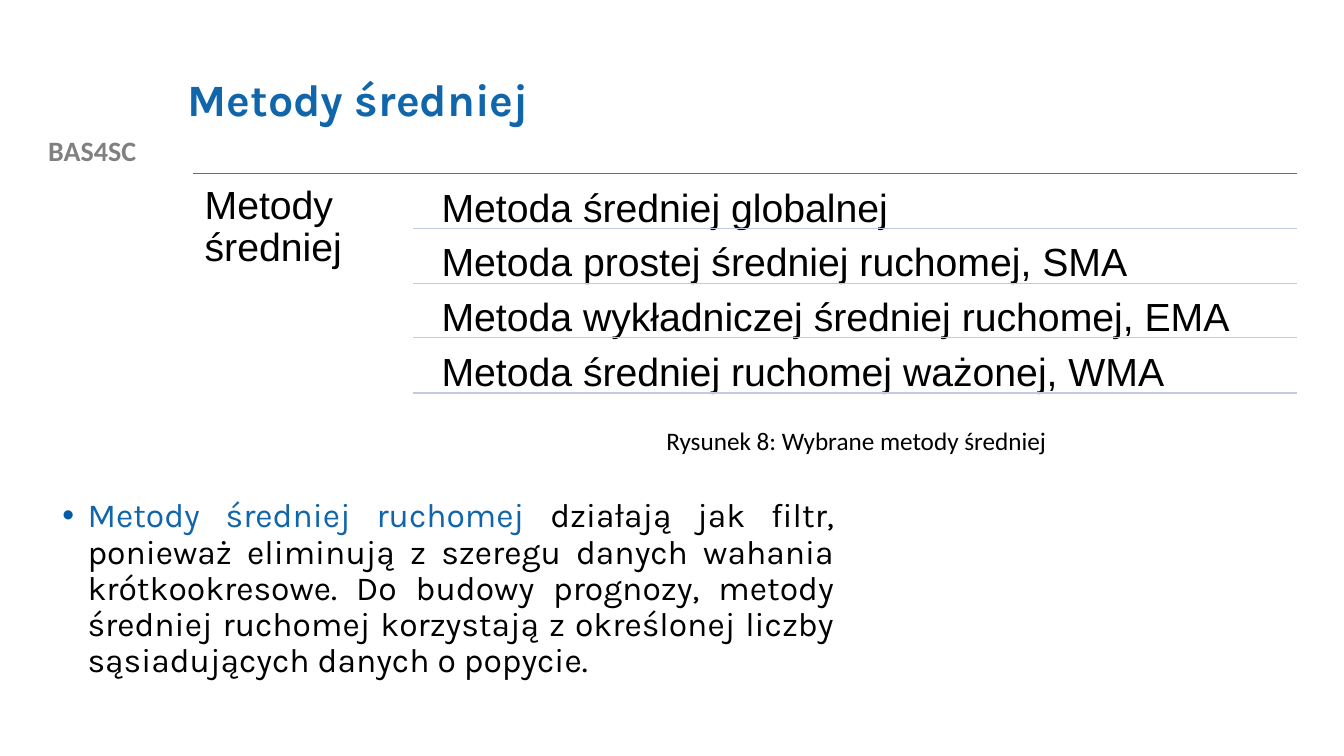
from pptx import Presentation
from pptx.dml.color import RGBColor
from pptx.enum.shapes import MSO_CONNECTOR
from pptx.enum.text import MSO_ANCHOR, MSO_AUTO_SIZE, PP_ALIGN
from pptx.oxml.ns import qn
from pptx.util import Emu, Pt
from lxml import etree

STRAIGHT = MSO_CONNECTOR.STRAIGHT
TOP, MIDDLE = MSO_ANCHOR.TOP, MSO_ANCHOR.MIDDLE
NO_AUTOFIT = MSO_AUTO_SIZE.NONE
LEFT, CENTER, JUSTIFY = PP_ALIGN.LEFT, PP_ALIGN.CENTER, PP_ALIGN.JUSTIFY
TITLE_ONLY = 5
EMU_PER_PX = 9144
COLORS = {
    "title": "1065AB",
    "bullet": "015BA6",
    "label": "808080",
    "text": "000000",
    "main_line": "4472C4",
    "row_line": "C1C9E4",
}
METHODS = [
    "Metoda średniej globalnej",
    "Metoda prostej średniej ruchomej, SMA",
    "Metoda wykładniczej średniej ruchomej, EMA",
    "Metoda średniej ruchomej ważonej, WMA",
]
LIST_TOP, LIST_RIGHT = 172, 1286
FIRST_ROW_LINE, LAST_ROW_LINE = 227, 390


def px(value):
    return Emu(value * EMU_PER_PX)


def color(name):
    return RGBColor.from_string(COLORS[name])


def add_bullet(paragraph, indent):
    properties = paragraph._p.get_or_add_pPr()
    properties.set("marL", str(px(indent)))
    properties.set("indent", str(px(-indent)))
    bullet_color = etree.SubElement(properties, qn("a:buClr"))
    etree.SubElement(bullet_color, qn("a:srgbClr"), val=COLORS["bullet"])
    etree.SubElement(properties, qn("a:buFont"), typeface="Arial")
    etree.SubElement(properties, qn("a:buChar"), char="•")


def write_text(shape, *parts, font="Arial", size=28, bold=False, align=LEFT,
               anchor=TOP, spacing=0.9, inset=None, bullet_indent=None):
    frame = shape.text_frame
    frame.word_wrap = True
    frame.auto_size = NO_AUTOFIT
    frame.vertical_anchor = anchor
    if inset is not None:
        frame.margin_left = frame.margin_right = px(inset)
        frame.margin_top = frame.margin_bottom = px(inset)
    paragraph = frame.paragraphs[0]
    paragraph.alignment = align
    paragraph.line_spacing = spacing
    if bullet_indent:
        add_bullet(paragraph, bullet_indent)
    for text, color_name in parts:
        run = paragraph.add_run()
        run.text = text
        run.font.name = font
        run.font.size = Pt(size)
        run.font.bold = bold
        run.font.color.rgb = color(color_name)


def add_text(slide, left, top, width, height, *parts, **text_format):
    box = slide.shapes.add_textbox(px(left), px(top), px(width), px(height))
    write_text(box, *parts, **text_format)


def add_title(slide, text):
    title = slide.shapes.title
    title.left, title.top = px(176), px(40)
    title.width, title.height = px(1066), px(122)
    write_text(title, (text, "title"), font="Karla", size=32, bold=True, anchor=MIDDLE)


def add_rule(slide, left, top, color_name):
    line = slide.shapes.add_connector(STRAIGHT, px(left), px(top), px(LIST_RIGHT), px(top))
    line.line.color.rgb = color(color_name)
    line.line.width = Pt(1)
    etree.SubElement(line._element.spPr, qn("a:effectLst"))


def add_method_list(slide):
    add_rule(slide, 191, LIST_TOP, "main_line")
    add_text(slide, 191, LIST_TOP, 219, 220, ("Metody średniej", "text"), inset=12)
    for index, method in enumerate(METHODS):
        line_top = FIRST_ROW_LINE + (LAST_ROW_LINE - FIRST_ROW_LINE) * index // (len(METHODS) - 1)
        add_text(slide, 426, line_top - 52, 860, 52, (method, "text"), inset=12)
        add_rule(slide, 410, line_top, "row_line")


def main():
    presentation = Presentation()
    presentation.slide_width, presentation.slide_height = px(1333), px(750)
    slide = presentation.slides.add_slide(presentation.slide_layouts[TITLE_ONLY])
    add_title(slide, "Metody średniej")
    add_text(slide, 0, 128, 183, 44, ("BAS4SC", "label"),
             font="Calibri", size=20, bold=True, align=CENTER, spacing=1.0)
    add_method_list(slide)
    add_text(slide, 651, 417, 635, 40, ("Rysunek 8: Wybrane metody średniej", "text"),
             font="Calibri", size=18, spacing=1.0)
    add_text(slide, 52, 490, 785, 220,
             ("Metody średniej ruchomej ", "title"),
             ("działają jak filtr, ponieważ eliminują z szeregu danych wahania "
              "krótkookresowe. Do budowy prognozy, metody średniej ruchomej "
              "korzystają z określonej liczby sąsiadujących danych o popycie.", "text"),
             font="Karla", size=24, align=JUSTIFY, bullet_indent=25)
    presentation.save("out.pptx")


if __name__ == "__main__":
    main()
